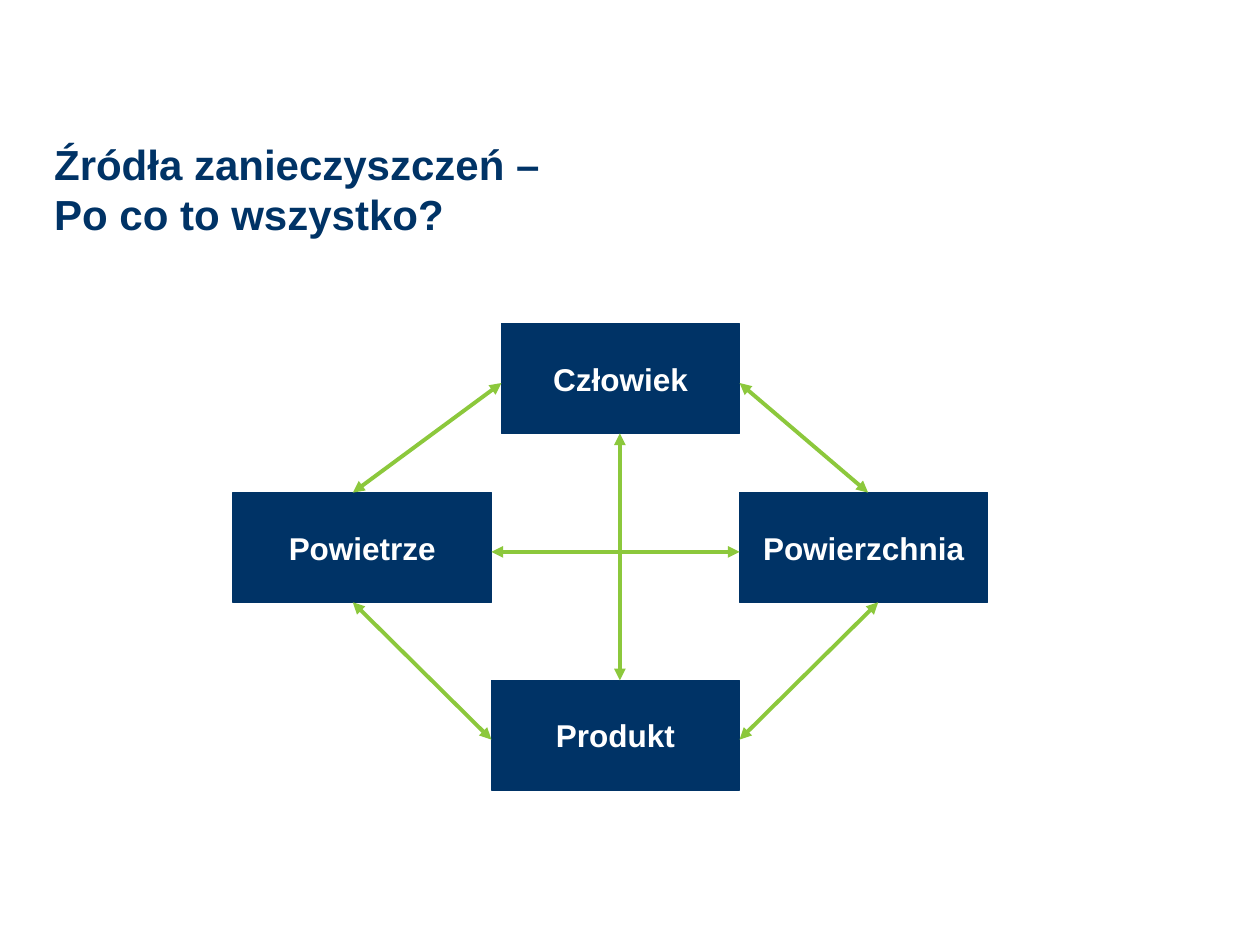
"""Builds a slide on how four sources of contamination affect one another."""
from lxml import etree
from pptx import Presentation, util as u
from pptx.dml.color import RGBColor
from pptx.enum import shapes, text
from pptx.oxml.ns import qn

COLORS = {"navy": "003366", "green": "8CC83C", "white": "FFFFFF"}
TITLE = ["Źródła zanieczyszczeń –", "Po co to wszystko?"]
TITLE_AREA = (0.43, 1.1, 9.76, 0.47)

BOX_HEIGHT = 0.87
LEFT_EDGE, RIGHT_EDGE = 3.9, 5.87
ROWS = {"top": 2.57, "middle": 3.91, "bottom": 5.4}
SOURCES = [
    ("Człowiek", 3.98, "top", 1.89),
    ("Powierzchnia", RIGHT_EDGE, "middle", 1.97),
    ("Produkt", LEFT_EDGE, "bottom", 1.97),
    ("Powietrze", 1.85, "middle", 2.05),
]
SIDE_OFFSET = 0.47
AIR_X, CENTRE_X = 2.8, 4.92
UPPER_Y, MIDDLE_Y, LOWER_Y = (top + SIDE_OFFSET for top in ROWS.values())
MIDDLE_TOP, MIDDLE_BOTTOM = ROWS["middle"], ROWS["middle"] + BOX_HEIGHT
ARROWS = [
    (CENTRE_X, ROWS["top"] + BOX_HEIGHT, CENTRE_X, ROWS["bottom"]),
    (LEFT_EDGE, MIDDLE_Y, RIGHT_EDGE, MIDDLE_Y),
    (AIR_X, MIDDLE_TOP, 3.98, UPPER_Y),
    (AIR_X, MIDDLE_BOTTOM, LEFT_EDGE, LOWER_Y),
    (RIGHT_EDGE, UPPER_Y, 6.89, MIDDLE_TOP),
    (RIGHT_EDGE, LOWER_Y, 6.97, MIDDLE_BOTTOM),
]


def color(name):
    return RGBColor.from_string(COLORS[name])


def set_all(target, values):
    for name, value in values.items():
        setattr(target, name, value)


def inches(lengths):
    return [u.Inches(length) for length in lengths]


def write(frame, lines, size, color_name, alignment):
    frame.text = "\n".join(lines)
    for paragraph in frame.paragraphs:
        paragraph.alignment = alignment
        set_all(paragraph.font, {"name": "Arial", "size": u.Pt(size), "bold": True})
        paragraph.font.color.rgb = color(color_name)


def add_source(slide, label, left, row, width):
    area = inches((left, ROWS[row], width, BOX_HEIGHT))
    shape = slide.shapes.add_shape(shapes.MSO_SHAPE.RECTANGLE, *area)
    shape.shadow.inherit = False
    shape.fill.solid()
    shape.fill.fore_color.rgb = shape.line.color.rgb = color("navy")
    shape.line.width = u.Pt(0.75)
    set_all(shape.text_frame, {"word_wrap": False,
                               "vertical_anchor": text.MSO_ANCHOR.MIDDLE})
    write(shape.text_frame, [label], 18, "white", text.PP_ALIGN.CENTER)


def add_arrow(slide, ends):
    connector = slide.shapes.add_connector(shapes.MSO_CONNECTOR.STRAIGHT, *inches(ends))
    connector.line.color.rgb = color("green")
    connector.line.width = u.Pt(2.25)
    properties = connector._element.spPr
    line = properties.find(qn("a:ln"))
    for end in ("a:headEnd", "a:tailEnd"):
        etree.SubElement(line, qn(end), type="triangle")
    etree.SubElement(properties, qn("a:effectLst"))


def add_title(slide):
    frame = slide.shapes.add_textbox(*inches(TITLE_AREA)).text_frame
    margins = ("margin_left", "margin_top", "margin_right", "margin_bottom")
    set_all(frame, {"word_wrap": True, **dict.fromkeys(margins, 0)})
    write(frame, TITLE, 24, "navy", text.PP_ALIGN.LEFT)


def main():
    presentation = Presentation()
    set_all(presentation, {"slide_width": u.Inches(10), "slide_height": u.Inches(7.5)})
    slide = presentation.slides.add_slide(presentation.slide_layouts[6])
    for source in SOURCES:
        add_source(slide, *source)
    for ends in ARROWS:
        add_arrow(slide, ends)
    add_title(slide)
    presentation.save("out.pptx")


if __name__ == "__main__":
    main()
